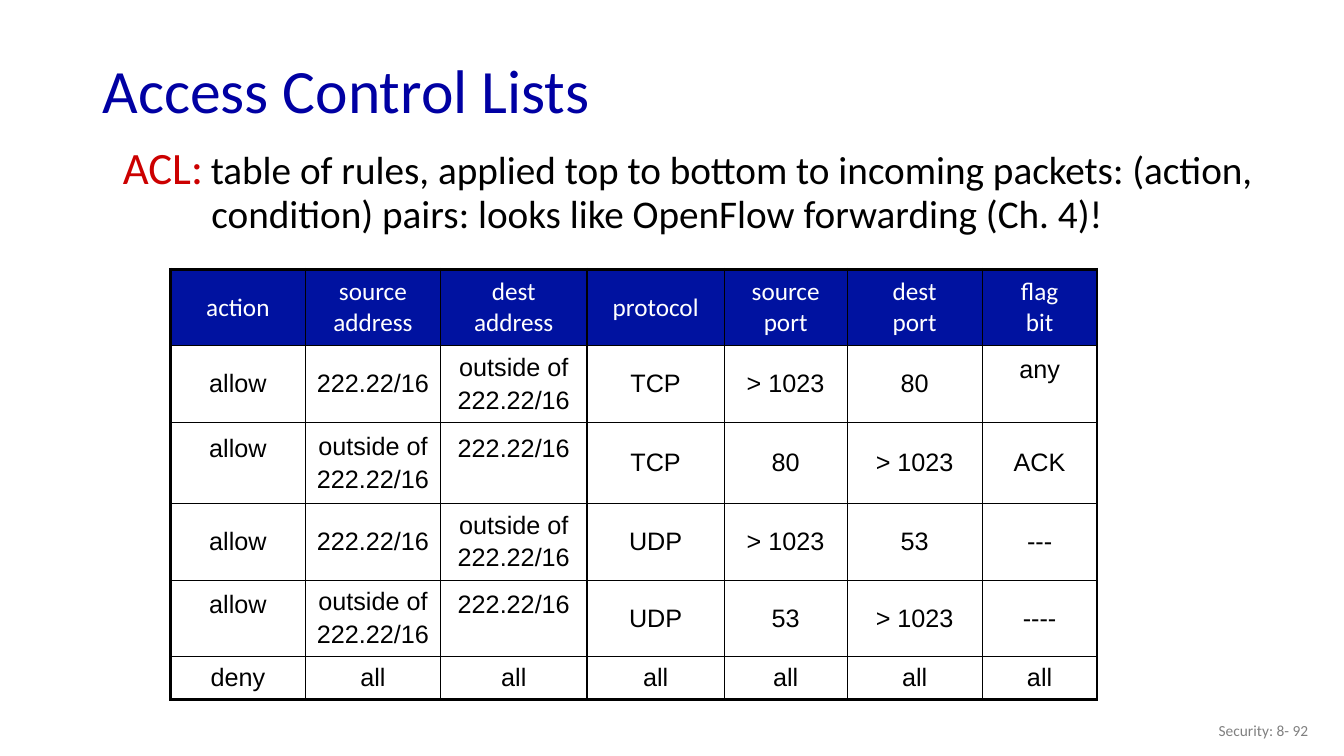
import dataclasses

import pptx
import pptx.dml.color
import pptx.enum.text
import pptx.oxml
import pptx.oxml.ns
import pptx.slide
import pptx.table
import pptx.text.text
import pptx.util

Pt = pptx.util.Pt
Align = pptx.enum.text.PP_ALIGN
Anchor = pptx.enum.text.MSO_ANCHOR


@dataclasses.dataclass(frozen=True)
class Theme:
    heading_font: str = "Calibri"
    cell_font: str = "Arial"
    title_color: str = "0000A3"
    term_color: str = "CC0000"
    text_color: str = "000000"
    footer_color: str = "808080"
    header_fill: str = "0012A0"
    header_text: str = "FFFFFF"
    border_color: str = "000000"
    title_size: float = 44
    term_size: float = 32
    gap_size: float = 24
    definition_size: float = 28
    cell_size: float = 18
    footer_size: float = 11
    outer_border: float = 2.25
    inner_border: float = 1


@dataclasses.dataclass(frozen=True)
class Run:
    text: str
    size: float
    color: str


@dataclasses.dataclass(frozen=True)
class TextBlock:
    left: float
    top: float
    width: float
    height: float
    runs: tuple[Run, ...]
    anchor: Anchor = Anchor.MIDDLE
    alignment: Align = Align.LEFT
    line_spacing: float = 1.0
    space_before: float = 0
    hanging: float = 0


@dataclasses.dataclass(frozen=True)
class Rule:
    height: float
    cells: tuple[str, ...]
    raised: tuple[int, ...] = ()  # columns whose text sits above the middle


THEME = Theme()
TEXT_BLOCKS = (
    TextBlock(725.76, 507.6, 216, 28.8,
              (Run("Security: 8- 92", THEME.footer_size, THEME.footer_color),),
              alignment=Align.RIGHT),
    TextBlock(66.24, 31.68, 828, 70.56,
              (Run("Access Control Lists", THEME.title_size, THEME.title_color),),
              line_spacing=0.9),
    TextBlock(80.64, 100.8, 828, 79.92,
              (Run("ACL:", THEME.term_size, THEME.term_color),
               Run(" ", THEME.gap_size, THEME.term_color),
               Run("table of rules, applied top to bottom to incoming packets: "
                   "(action, condition) pairs: looks like OpenFlow forwarding (Ch. 4)!",
                   THEME.definition_size, THEME.text_color)),
              anchor=Anchor.TOP, line_spacing=0.9, space_before=4, hanging=63.36),
)

TABLE_LEFT, TABLE_TOP = 121.68, 192.24
COLUMN_WIDTHS = (96.48, 96.48, 104.76, 97.92, 87.84, 96.48, 82.08)
INSIDE, OUTSIDE = "222.22/16", "outside of\n222.22/16"
RULES = (
    Rule(54.72, ("action", "source\naddress", "dest\naddress", "protocol",
                 "source\nport", "dest\nport", "flag\nbit")),
    Rule(54.72, ("allow", INSIDE, OUTSIDE, "TCP", "> 1023", "80", "any"), (6,)),
    Rule(58, ("allow", OUTSIDE, INSIDE, "TCP", "80", "> 1023", "ACK"), (0, 2)),
    Rule(54.72, ("allow", INSIDE, OUTSIDE, "UDP", "> 1023", "53", "---")),
    Rule(54.72, ("allow", OUTSIDE, INSIDE, "UDP", "53", "> 1023", "----"), (0, 2)),
    Rule(30.6, ("deny",) + ("all",) * 6),
)
CELL_MARGIN, RAISED_MARGIN = 3.6, 23.6
PARAGRAPH_GAP = 3.2


def rgb(color: str) -> pptx.dml.color.RGBColor:
    return pptx.dml.color.RGBColor.from_string(color)


def style_font(font: pptx.text.text.Font, name: str, size: float, color: str) -> None:
    font.name, font.size = name, Pt(size)
    font.color.rgb = rgb(color)


def draw_text(slide: pptx.slide.Slide, block: TextBlock) -> None:
    shape = slide.shapes.add_textbox(
        Pt(block.left), Pt(block.top), Pt(block.width), Pt(block.height))
    frame = shape.text_frame
    frame.word_wrap = True
    frame.vertical_anchor = block.anchor
    paragraph = frame.paragraphs[0]
    paragraph.alignment = block.alignment
    paragraph.line_spacing = block.line_spacing
    paragraph.space_before = Pt(block.space_before)
    if block.hanging:
        properties = paragraph._p.get_or_add_pPr()
        properties.set("marL", str(Pt(block.hanging)))
        properties.set("indent", str(-Pt(block.hanging)))
    for item in block.runs:
        run = paragraph.add_run()
        run.text = item.text
        style_font(run.font, THEME.heading_font, item.size, item.color)


def draw_borders(cell: pptx.table._Cell, row: int, column: int) -> None:
    on_outer_edge = {
        "lnL": column == 0,
        "lnR": column == len(COLUMN_WIDTHS) - 1,
        "lnT": row == 0,
        "lnB": row == len(RULES) - 1,
    }
    properties = cell._tc.get_or_add_tcPr()
    for tag, outer in on_outer_edge.items():
        width = THEME.outer_border if outer else THEME.inner_border
        properties.append(pptx.oxml.parse_xml(
            f'<a:{tag} {pptx.oxml.ns.nsdecls("a")} w="{Pt(width)}"><a:solidFill>'
            f'<a:srgbClr val="{THEME.border_color}"/></a:solidFill></a:{tag}>'))


def draw_cell(cell: pptx.table._Cell, row: int, column: int) -> None:
    rule, header = RULES[row], row == 0
    draw_borders(cell, row, column)
    if header:
        cell.fill.solid()
        cell.fill.fore_color.rgb = rgb(THEME.header_fill)
    else:
        cell.fill.background()
    cell.vertical_anchor = Anchor.MIDDLE
    cell.margin_top = Pt(CELL_MARGIN)
    cell.margin_bottom = Pt(RAISED_MARGIN if column in rule.raised else CELL_MARGIN)
    cell.text = rule.cells[column]
    for index, paragraph in enumerate(cell.text_frame.paragraphs):
        paragraph.alignment = Align.CENTER
        if index and not header:
            paragraph.space_before = Pt(PARAGRAPH_GAP)
        style_font(paragraph.font,
                   THEME.heading_font if header else THEME.cell_font,
                   THEME.cell_size,
                   THEME.header_text if header else THEME.text_color)


def draw_rules(slide: pptx.slide.Slide) -> None:
    table = slide.shapes.add_table(
        len(RULES), len(COLUMN_WIDTHS), Pt(TABLE_LEFT), Pt(TABLE_TOP),
        Pt(sum(COLUMN_WIDTHS)), Pt(sum(rule.height for rule in RULES))).table
    table.first_row = table.horz_banding = False
    for column, width in enumerate(COLUMN_WIDTHS):
        table.columns[column].width = Pt(width)
    for row, rule in enumerate(RULES):
        table.rows[row].height = Pt(rule.height)
        for column in range(len(COLUMN_WIDTHS)):
            draw_cell(table.cell(row, column), row, column)


def main() -> None:
    presentation = pptx.Presentation()
    presentation.slide_width, presentation.slide_height = Pt(960), Pt(540)
    slide = presentation.slides.add_slide(presentation.slide_layouts[6])
    # Footer, title and definition
    for block in TEXT_BLOCKS:
        draw_text(slide, block)
    # Access control table
    draw_rules(slide)
    presentation.save("out.pptx")


if __name__ == "__main__":
    main()
